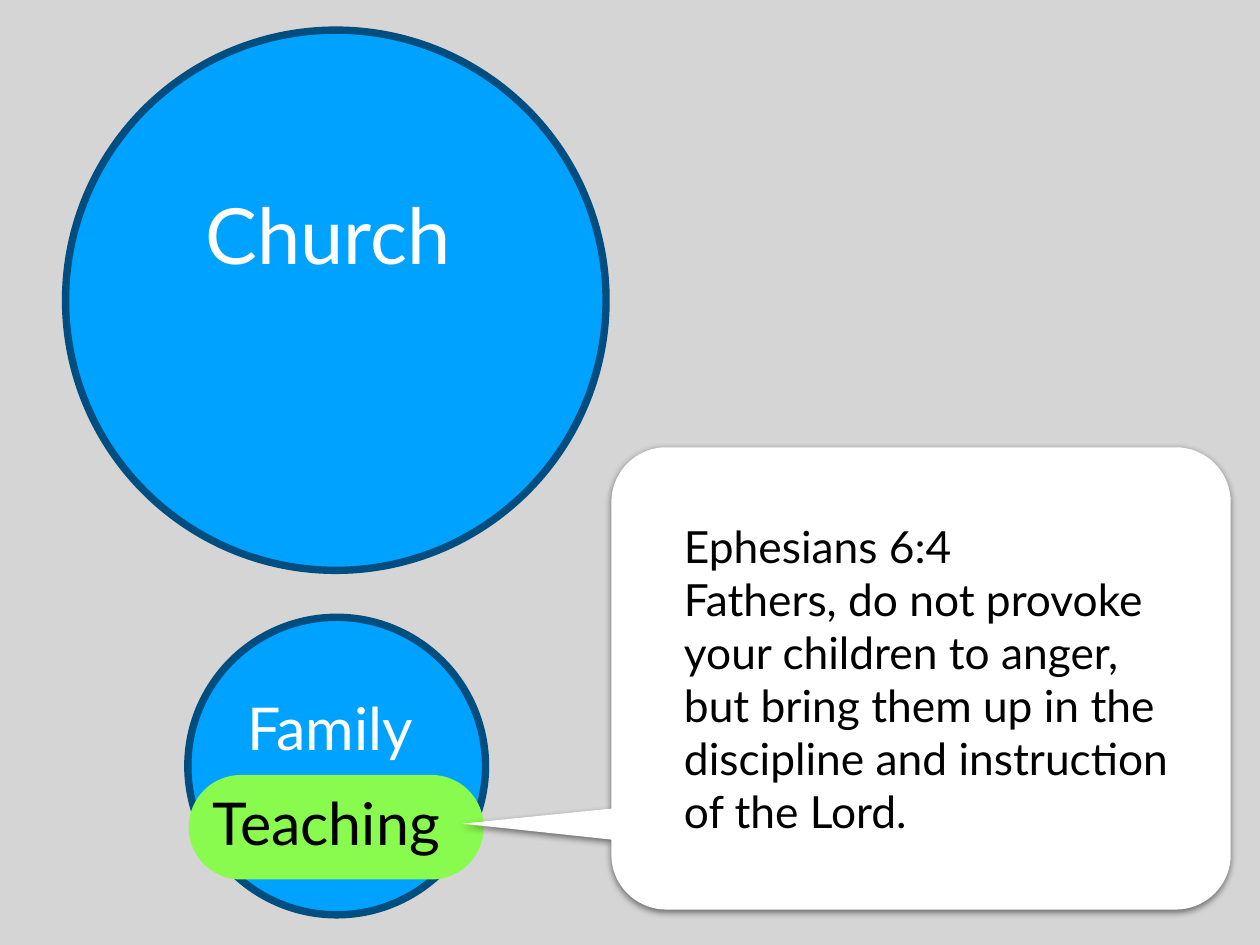
from math import cos, radians, sin

from lxml.etree import SubElement
from pptx import Presentation
from pptx.dml.color import RGBColor
from pptx.enum.shapes import MSO_SHAPE
from pptx.enum.text import MSO_ANCHOR, PP_ALIGN
from pptx.oxml.ns import qn
from pptx.util import Inches, Pt

GRAY = RGBColor(0xD5, 0xD5, 0xD5)
BLUE = RGBColor(0x00, 0xA2, 0xFF)
NAVY = RGBColor(0x00, 0x4D, 0x80)
GREEN = RGBColor(0x89, 0xFA, 0x4E)
WHITE = RGBColor(0xFF, 0xFF, 0xFF)
BLACK = RGBColor(0x00, 0x00, 0x00)

FONT = "Lato"
VERSE = [
    "Ephesians 6:4",
    "Fathers, do not provoke your children to anger, but bring them up "
    "in the discipline and instruction of the Lord.",
]


def add_text(shapes, box, lines, size, color):
    """Place left-aligned, vertically centred lines in a box."""
    frame = shapes.add_textbox(*map(Inches, box)).text_frame
    frame.word_wrap = True
    frame.vertical_anchor = MSO_ANCHOR.MIDDLE
    frame.margin_left = frame.margin_right = Inches(0.06)
    frame.margin_top = frame.margin_bottom = Inches(0.06)
    frame.text = "\n".join(lines)
    for paragraph in frame.paragraphs:
        paragraph.alignment = PP_ALIGN.LEFT
        paragraph.font.name = FONT
        paragraph.font.size = Pt(size)
        paragraph.font.color.rgb = color


def add_filled(shapes, kind, box, color):
    """Add a flat preset shape without an outline."""
    shape = shapes.add_shape(kind, *map(Inches, box))
    shape.shadow.inherit = False
    shape.fill.solid()
    shape.fill.fore_color.rgb = color
    shape.line.fill.background()
    return shape


def add_circle(slide, left, top, diameter):
    """Draw one outlined blue circle."""
    box = (left, top, diameter, diameter)
    circle = add_filled(slide.shapes, MSO_SHAPE.OVAL, box, BLUE)
    circle.line.color.rgb = NAVY
    circle.line.width = Pt(6)


def add_teaching(slide, left, top, width, height):
    """Draw the green teaching pill with its label."""
    group = slide.shapes.add_group_shape()
    box = (left, top, width, height)
    pill = add_filled(group.shapes, MSO_SHAPE.ROUNDED_RECTANGLE, box, GREEN)
    pill.adjustments[0] = 0.5
    label = (left + 0.21, top + 0.03, 2.9, 1.01)
    add_text(group.shapes, label, ["Teaching"], 48, BLACK)


def callout_points(left, top, width, height, radius, tail_length):
    """Return the outline of a rounded box with a tail on its left side."""
    right, bottom = left + width, top + height
    tail_y = top + 4.25
    points = [
        (left, tail_y + 0.18),
        (left - tail_length, tail_y),
        (left, tail_y - 0.17),
    ]
    corners = [
        (left + radius, top + radius, 180),
        (right - radius, top + radius, 270),
        (right - radius, bottom - radius, 0),
        (left + radius, bottom - radius, 90),
    ]
    for center_x, center_y, start in corners:
        for step in range(0, 91, 5):
            angle = radians(start + step)
            points.append(
                (center_x + radius * cos(angle), center_y + radius * sin(angle))
            )
    return points


def add_soft_shadow(shape):
    """Give a shape a soft half-transparent shadow just below it."""
    shape.shadow.inherit = False
    effects = shape._element.spPr.find(qn("a:effectLst"))
    shadow = SubElement(
        effects,
        qn("a:outerShdw"),
        blurRad=str(Pt(5)),
        dist=str(Pt(2)),
        dir=str(90 * 60000),
        rotWithShape="0",
    )
    color = SubElement(shadow, qn("a:srgbClr"), val=str(BLACK))
    SubElement(color, qn("a:alpha"), val="50000")


def add_verse(slide, left, top, width, height):
    """Draw the white callout holding the verse."""
    group = slide.shapes.add_group_shape()
    outline = callout_points(left, top, width, height, 0.62, 1.68)
    points = [(Inches(x), Inches(y)) for x, y in outline]
    builder = group.shapes.build_freeform(*points[0])
    builder.add_line_segments(points[1:], close=True)
    callout = builder.convert_to_shape()
    callout.fill.solid()
    callout.fill.fore_color.rgb = WHITE
    callout.line.fill.background()
    add_soft_shadow(callout)
    text_box = (left + 0.76, top, 5.76, height)
    add_text(group.shapes, text_box, VERSE, 36, BLACK)


def main():
    """Build and save the slide."""
    presentation = Presentation()
    presentation.slide_width = Inches(14.22)
    presentation.slide_height = Inches(10.67)
    slide = presentation.slides.add_slide(presentation.slide_layouts[6])
    slide.background.fill.solid()
    slide.background.fill.fore_color.rgb = GRAY
    add_circle(slide, 0.74, 0.34, 6.1)
    add_circle(slide, 2.12, 6.97, 3.36)
    add_text(slide.shapes, (2.26, 1.99, 3.06, 1.29), ["Church"], 63, WHITE)
    add_text(slide.shapes, (2.73, 7.7, 2.13, 1.01), ["Family"], 48, WHITE)
    add_teaching(slide, 2.13, 8.75, 3.33, 1.18)
    add_verse(slide, 6.9, 5.05, 6.99, 5.22)
    presentation.save("out.pptx")


if __name__ == "__main__":
    main()
